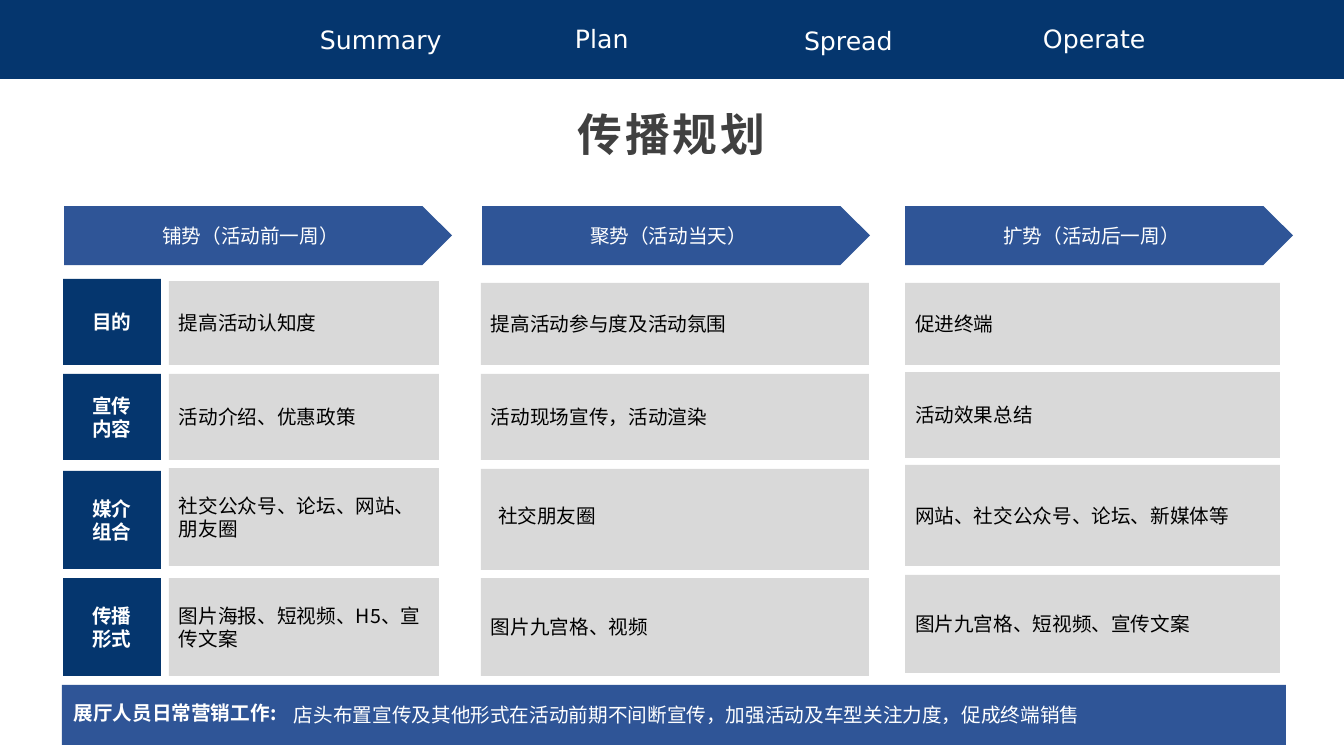
from dataclasses import dataclass

from lxml import etree
from pptx import Presentation
from pptx.dml.color import RGBColor
from pptx.enum.shapes import MSO_SHAPE
from pptx.enum.text import MSO_ANCHOR, MSO_AUTO_SIZE, PP_ALIGN
from pptx.oxml.ns import qn
from pptx.util import Pt

RECT, ARROW = MSO_SHAPE.RECTANGLE, MSO_SHAPE.PENTAGON
LEFT, CENTER, JUSTIFY = PP_ALIGN.LEFT, PP_ALIGN.CENTER, PP_ALIGN.JUSTIFY
TOP, MIDDLE = MSO_ANCHOR.TOP, MSO_ANCHOR.MIDDLE

# Content; every box is (left, top, width, height) in px
WIDTH, HEIGHT = 1344, 756
SCALE = 12192000 / WIDTH
MENU = [
    ("Summary", (310, 19, 167, 40)),
    ("Plan", (565, 18, 144, 40)),
    ("Spread", (794, 20, 134, 40)),
    ("Operate", (1033, 18, 169, 40)),
]
TITLE = "传播规划"
PHASES = [
    ("铺势（活动前一周）", 64),
    ("聚势（活动当天）", 482),
    ("扩势（活动后一周）", 905),
]
LABELS = {
    "left": 63, "width": 98,
    "rows": [("目的", 279, 86), ("宣传\n内容", 374, 86),
             ("媒介\n组合", 471, 98), ("传播\n形式", 578, 98)],
}
COLUMNS = [
    {"left": 169, "width": 270,
     "rows": [("提高活动认知度", 281, 84),
              ("活动介绍、优惠政策", 374, 86),
              ("社交公众号、论坛、网站、朋友圈", 468, 98),
              ("图片海报、短视频、H5、宣传文案", 578, 98)]},
    {"left": 481, "width": 388,
     "rows": [("提高活动参与度及活动氛围", 283, 82),
              ("活动现场宣传，活动渲染", 374, 86),
              ("", 469, 101),
              ("图片九宫格、视频", 578, 98)]},
    {"left": 905, "width": 375,
     "rows": [("促进终端", 283, 82),
              ("活动效果总结", 372, 86),
              ("网站、社交公众号、论坛、新媒体等", 465, 101),
              ("图片九宫格、短视频、宣传文案", 575, 98)]},
]
CIRCLE = ("社交朋友圈", (488, 499, 375, 34))
DAILY = "展厅人员日常营销工作:"
WORK = "店头布置宣传及其他形式在活动前期不间断宣传，加强活动及车型关注力度，促成终端销售"


@dataclass(frozen=True)
class Theme:
    navy: str = "05366E"
    blue: str = "2F5597"
    gray: str = "D9D9D9"
    white: str = "FFFFFF"
    black: str = "000000"
    dark: str = "404040"
    latin: str = "DejaVu Sans"
    cjk: str = "Noto Sans CJK SC"
    body: int = 14
    menu: int = 18
    title: int = 32


THEME = Theme()


def emu(box):
    return [round(n * SCALE) for n in box]


def write(shape, text, color=THEME.black, size=THEME.body, font=THEME.cjk,
          bold=False, align=LEFT, anchor=TOP, wrap=True, line=None,
          track=None, inset=(10, 5)):
    frame = shape.text_frame
    frame.auto_size = MSO_AUTO_SIZE.NONE
    frame.word_wrap = wrap
    frame.vertical_anchor = anchor
    side, edge = emu(inset)
    frame.margin_left = frame.margin_right = side
    frame.margin_top = frame.margin_bottom = edge
    for i, part in enumerate(text.split("\n")):
        para = frame.add_paragraph() if i else frame.paragraphs[0]
        para.alignment = align
        para.space_before = Pt(0)
        if line:
            para.line_spacing = line
        run = para.add_run()
        run.text = part
        run.font.size = Pt(size)
        run.font.bold = bold
        run.font.color.rgb = RGBColor.from_string(color)
        run.font.name = font
        props = run._r.get_or_add_rPr()
        etree.SubElement(props, qn("a:ea")).set("typeface", font)
        if track:
            props.set("spc", str(track * 100))


def block(slide, box, fill, kind=RECT, text="", **style):
    shape = slide.shapes.add_shape(kind, *emu(box))
    shape.shadow.inherit = False
    shape.fill.solid()
    shape.fill.fore_color.rgb = RGBColor.from_string(fill)
    shape.line.fill.background()
    if text:
        write(shape, text, anchor=MIDDLE, **style)
    return shape


def label(slide, box, text, **style):
    write(slide.shapes.add_textbox(*emu(box)), text, **style)


def stack(slide, column, fill, **style):
    for text, top, height in column["rows"]:
        box = (column["left"], top, column["width"], height)
        block(slide, box, fill, text=text, **style)


def main():
    deck = Presentation()
    deck.slide_width, deck.slide_height = emu((WIDTH, HEIGHT))
    slide = deck.slides.add_slide(deck.slide_layouts[5])

    block(slide, (0, 0, WIDTH, 79), THEME.navy)
    for text, box in MENU:
        label(slide, box, text, color=THEME.white, size=THEME.menu,
              font=THEME.latin)

    title = slide.shapes.title
    title.left, title.top, title.width, title.height = emu((10, 113, 1323, 72))
    write(title, TITLE, color=THEME.dark, size=THEME.title, bold=True,
          align=CENTER, line=0.9, track=2, inset=(0, 0))

    for text, left in PHASES:
        arrow = block(slide, (left, 206, 388, 59), THEME.blue, kind=ARROW,
                      text=text, color=THEME.white, align=CENTER)
        arrow.adjustments[0] = 0.5

    stack(slide, LABELS, THEME.navy, color=THEME.white, bold=True,
          align=CENTER)
    for column in COLUMNS:
        stack(slide, column, THEME.gray)
    text, box = CIRCLE
    label(slide, box, text)

    block(slide, (62, 685, 1224, 60), THEME.blue)
    label(slide, (63, 696, 224, 34), DAILY, color=THEME.white, bold=True,
          align=CENTER, wrap=False)
    label(slide, (284, 686, 902, 41), WORK, color=THEME.white,
          align=JUSTIFY, line=1.5)

    deck.save("out.pptx")


if __name__ == "__main__":
    main()
